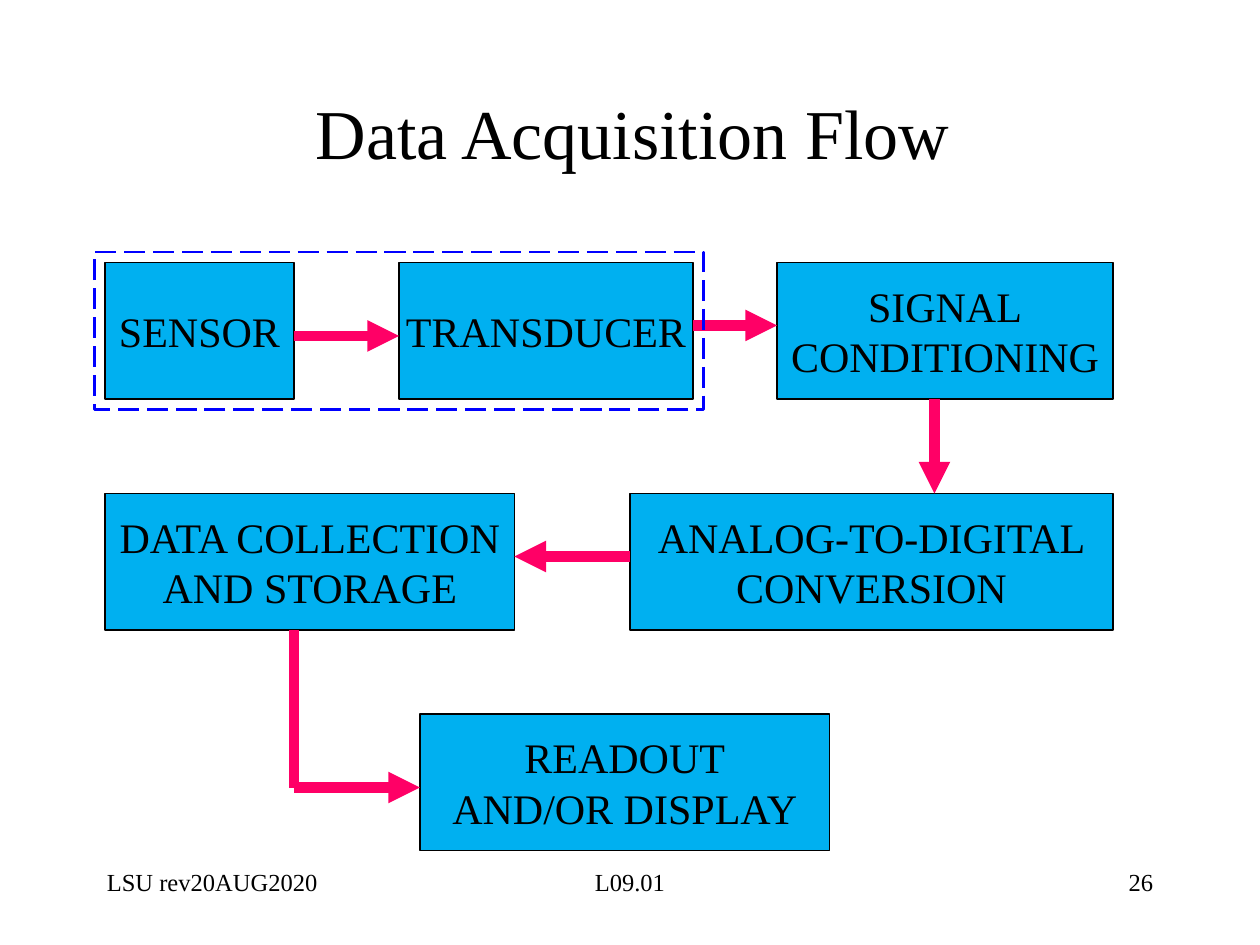
from dataclasses import dataclass

import pptx
import pptx.dml.color
import pptx.enum.dml
import pptx.enum.shapes
import pptx.enum.text
import pptx.oxml
import pptx.oxml.ns
import pptx.util

COLORS = {"text": "000000", "box": "00B0F0", "arrow": "FF0066", "frame": "0000FF"}
GRID = 2.54 / 12  # the layout snaps to twelfths of an inch
BOX_HEIGHT = 13
ALIGN = pptx.enum.text.PP_ALIGN
ANCHOR = pptx.enum.text.MSO_ANCHOR


@dataclass
class Step:
    left: float
    top: float
    width: float
    lines: tuple[str, ...]


@dataclass
class Arrow:
    start: tuple[float, float]
    end: tuple[float, float]
    head: bool = True


@dataclass
class Footer:
    left: float
    width: float
    text: str
    align: ALIGN


STEPS = [
    Step(10, 25, 18, ("SENSOR",)),
    Step(38, 25, 28, ("TRANSDUCER",)),
    Step(74, 25, 32, ("SIGNAL", "CONDITIONING")),
    Step(60, 47, 46, ("ANALOG-TO-DIGITAL", "CONVERSION")),
    Step(10, 47, 39, ("DATA COLLECTION", "AND STORAGE")),
    Step(40, 68, 39, ("READOUT", "AND/OR DISPLAY")),
]
ARROWS = [
    Arrow((28, 32), (38, 32)),
    Arrow((66, 31), (74, 31)),
    Arrow((89, 38), (89, 47)),
    Arrow((60, 53), (49, 53)),
    Arrow((28, 60), (28, 75), head=False),
    Arrow((28, 75), (40, 75)),
]
FOOTERS = [
    Footer(9, 25, "LSU rev20AUG2020", ALIGN.LEFT),
    Footer(41, 38, "L09.01", ALIGN.CENTER),
    Footer(86, 25, "26", ALIGN.RIGHT),
]


def grid(*units: float) -> list[pptx.util.Length]:
    return [pptx.util.Cm(GRID * unit) for unit in units]


def color(name: str) -> pptx.dml.color.RGBColor:
    return pptx.dml.color.RGBColor.from_string(COLORS[name])


def write(frame, lines: tuple[str, ...], size: float, align: ALIGN,
          anchor: ANCHOR, wrap: bool = True) -> None:
    for name, value in {"word_wrap": wrap, "vertical_anchor": anchor}.items():
        setattr(frame, name, value)
    font_format = {"name": "Times New Roman", "size": pptx.util.Pt(size)}
    for index, line in enumerate(lines):
        para = frame.add_paragraph() if index else frame.paragraphs[0]
        para.alignment = align
        span = para.add_run()
        span.text = line
        for name, value in font_format.items():
            setattr(span.font, name, value)
        span.font.color.rgb = color("text")


def add_rectangle(page, bounds: tuple[float, ...], line: str, weight: float):
    box = page.shapes.add_shape(
        pptx.enum.shapes.MSO_SHAPE.RECTANGLE, *grid(*bounds))
    box.shadow.inherit = False
    box.line.color.rgb = color(line)
    box.line.width = pptx.util.Pt(weight)
    return box


def add_step(page, step: Step) -> None:
    bounds = (step.left, step.top, step.width, BOX_HEIGHT)
    box = add_rectangle(page, bounds, "text", 0.75)
    box.fill.solid()
    box.fill.fore_color.rgb = color("box")
    write(box.text_frame, step.lines, 24, ALIGN.CENTER, ANCHOR.MIDDLE, wrap=False)


def add_arrow(page, arrow: Arrow) -> None:
    link = page.shapes.add_connector(
        pptx.enum.shapes.MSO_CONNECTOR.STRAIGHT, *grid(*arrow.start, *arrow.end))
    link.line.color.rgb = color("arrow")
    link.line.width = pptx.util.Pt(6)
    qn = pptx.oxml.ns.qn
    if arrow.head:
        tail = link.line._get_or_add_ln().makeelement(
            qn("a:tailEnd"), {"type": "triangle"})
        link.line._get_or_add_ln().append(tail)
    properties = link._element.spPr
    properties.append(properties.makeelement(qn("a:effectLst"), {}))


def add_footer(page, footer: Footer) -> None:
    box = page.shapes.add_textbox(*grid(footer.left, 82, footer.width, 6))
    write(box.text_frame, (footer.text,), 14, footer.align, ANCHOR.TOP)


def main() -> None:
    deck = pptx.Presentation()
    deck.slide_width, deck.slide_height = grid(120, 90)
    page = deck.slides.add_slide(deck.slide_layouts[5])

    # Title
    title = page.shapes.title
    for name, value in zip(("left", "top", "width", "height"),
                           grid(9.25, 7, 102, 11)):
        setattr(title, name, value)
    write(title.text_frame, ("Data Acquisition Flow",), 40,
          ALIGN.CENTER, ANCHOR.MIDDLE)

    # Flow steps and arrows
    for step in STEPS:
        add_step(page, step)
    for arrow in ARROWS:
        add_arrow(page, arrow)

    # Dashed frame around sensor and transducer
    frame = add_rectangle(page, (9, 24, 58, 15), "frame", 1.5)
    frame.fill.background()
    frame.line.dash_style = pptx.enum.dml.MSO_LINE.LONG_DASH

    # Footer
    for footer in FOOTERS:
        add_footer(page, footer)

    deck.save("out.pptx")


if __name__ == "__main__":
    main()
